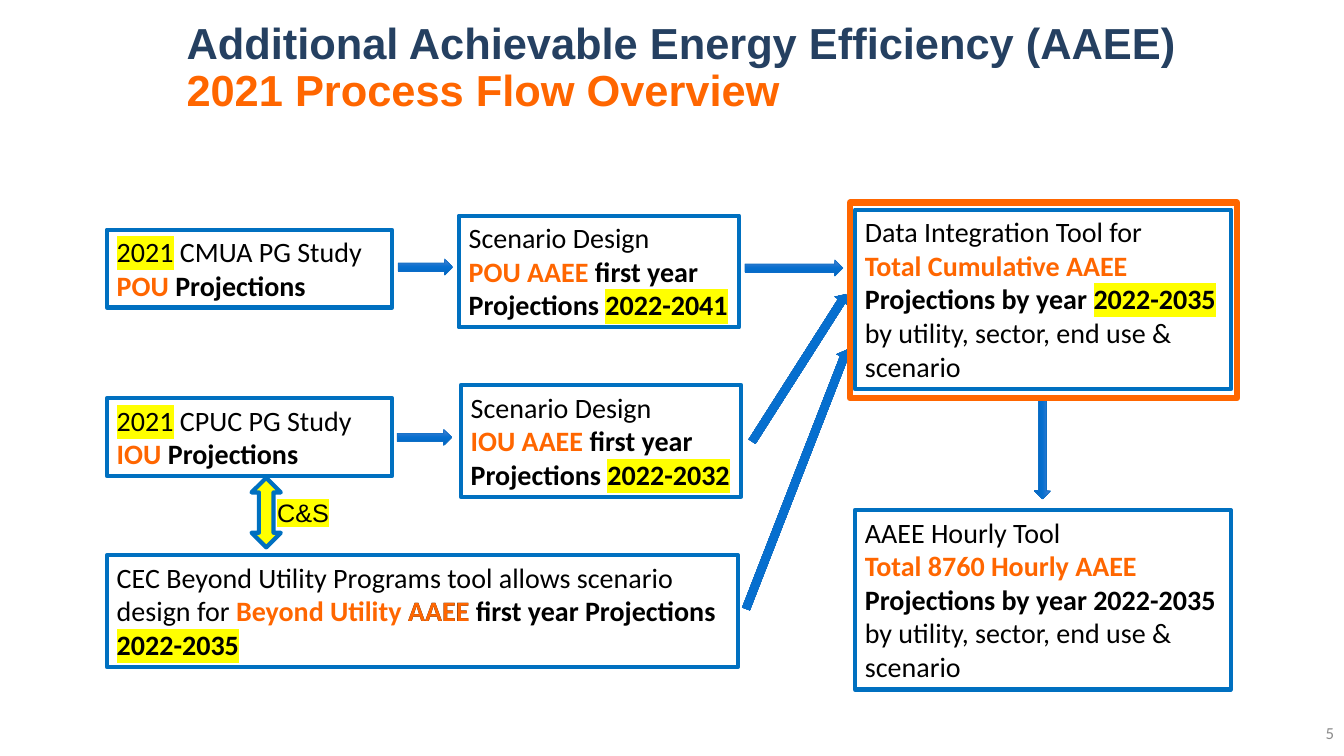
"""Build the AAEE 2021 process flow slide."""
import math

from lxml import etree
from pptx import Presentation
from pptx.dml.color import RGBColor
from pptx.enum.shapes import MSO_SHAPE
from pptx.enum.text import MSO_ANCHOR, MSO_AUTO_SIZE, PP_ALIGN
from pptx.oxml.ns import qn
from pptx.util import Inches, Pt

RECT, ARROW, BOTH = MSO_SHAPE.RECTANGLE, MSO_SHAPE.RIGHT_ARROW, MSO_SHAPE.LEFT_RIGHT_ARROW
TOP, MIDDLE = MSO_ANCHOR.TOP, MSO_ANCHOR.MIDDLE
GROW, FIXED = MSO_AUTO_SIZE.SHAPE_TO_FIT_TEXT, MSO_AUTO_SIZE.NONE
LEFT, RIGHT = PP_ALIGN.LEFT, PP_ALIGN.RIGHT

WIDE, HIGH = 13.33, 7.5
BLACK, ORANGE, YELLOW, BLUE, NAVY = "000000", "FF6600", "FFFF00", "0070C0", "254061"
EDGE, GRAY = "0F6FC6", "8C8C8C"
SHADES = [(0, "4C80D0"), (50, "066FCF"), (100, "0063BD")]
LINE, PAD = 0.336, 0.1

PLAIN, BOLD, HOT = {}, {"bold": True}, {"color": ORANGE, "bold": True}
MARK, KEY = {"mark": YELLOW}, {"mark": YELLOW, "bold": True}

TITLE = [[("Additional Achievable Energy Efficiency (AAEE) ", {"color": NAVY}),
          ("2021 Process Flow Overview", {"color": ORANGE})]]
END = [("by utility, sector, end use & scenario", PLAIN)]


def study(group, kind):
    """Return the text of a study box."""
    return [[("2021", MARK), (f" {group} PG Study", PLAIN)],
            [(kind, HOT), (" Projections", BOLD)]]


def design(kind, years):
    """Return the text of a scenario box."""
    return [[("Scenario Design", PLAIN)],
            [(f"{kind} AAEE ", HOT), ("first year", BOLD)],
            [("Projections ", BOLD), (years, KEY)]]


COLS = {"study": (1.06, 2.83), "pou": (4.55, 2.78), "iou": (4.57, 2.78),
        "tool": (8.48, 3.73), "span": (1.06, 6.26)}
BOXES = [
    ("study", 2.28, 2, study("CMUA", "POU")),
    ("study", 3.95, 2, study("CPUC", "IOU")),
    ("span", 5.51, 3, [[
        ("CEC Beyond Utility Programs tool allows scenario design for ", PLAIN),
        ("Beyond Utility ", HOT), ("AAEE first year Projections ", BOLD),
        ("2022-2035", KEY)]]),
    ("pou", 2.14, 3, design("POU", "2022-2041")),
    ("iou", 3.82, 3, design("IOU", "2022-2032")),
    ("tool", 2.08, 5, [
        [("Data Integration Tool for", PLAIN)],
        [("Total Cumulative AAEE ", HOT), ("Projections by year ", BOLD),
         ("2022-2035", KEY)], END]),
    ("tool", 5.06, 5, [
        [("AAEE Hourly Tool", PLAIN)],
        [("Total 8760 Hourly AAEE ", HOT), ("Projections by year 2022-2035", BOLD)],
        END]),
]
ARROWS = [
    ((7.39, 2.66), (8.36, 2.66)),
    ((3.95, 2.65), (4.49, 2.65)),
    ((3.94, 4.34), (4.48, 4.34)),
    ((7.46, 4.38), (8.39, 2.92)),
    ((7.40, 6.04), (8.40, 3.47)),
    ((10.34, 3.96), (10.34, 4.95)),
]


def rgb(code):
    """Turn a hex string into a colour."""
    return RGBColor.from_string(code)


def write(frame, paras, size=20, font="Calibri", anchor=TOP, fit=GROW,
          align=LEFT, space=None):
    """Fill a text frame with formatted runs."""
    frame.word_wrap, frame.auto_size, frame.vertical_anchor = True, fit, anchor
    for num, runs in enumerate(paras):
        para = frame.add_paragraph() if num else frame.paragraphs[0]
        para.alignment = align
        if space:
            para.line_spacing = space
        for text, look in runs:
            run = para.add_run()
            run.text = text
            face = run.font
            face.size, face.name = Pt(size), font
            face.bold = look.get("bold", False)
            face.color.rgb = rgb(look.get("color", BLACK))
            if "mark" in look:
                tint = etree.Element(qn("a:highlight"))
                etree.SubElement(tint, qn("a:srgbClr"), val=look["mark"])
                run._r.rPr.find(qn("a:solidFill")).addnext(tint)


def draw(slide, kind, at, color, width, fill=None):
    """Add an outlined shape."""
    shape = slide.shapes.add_shape(kind, *map(Inches, at))
    shape.shadow.inherit = False
    if fill:
        shape.fill.solid()
        shape.fill.fore_color.rgb = rgb(fill)
    else:
        shape.fill.background()
    shape.line.color.rgb, shape.line.width = rgb(color), Pt(width)
    return shape


def shade(shape):
    """Give a shape the blue three-stop gradient."""
    grad = etree.Element(qn("a:gradFill"), rotWithShape="1")
    stops = etree.SubElement(grad, qn("a:gsLst"))
    for share, code in SHADES:
        stop = etree.SubElement(stops, qn("a:gs"), pos=str(share * 1000))
        etree.SubElement(stop, qn("a:srgbClr"), val=code)
    etree.SubElement(grad, qn("a:lin"), ang="5400000", scaled="0")
    props = shape._element.spPr
    props.replace(props.find(qn("a:noFill")), grad)


def point(slide, kind, start, end, thick, *look):
    """Draw a block arrow between two points."""
    (left, top), (right, low) = start, end
    span = math.dist(start, end)
    at = ((left + right - span) / 2, (top + low - thick) / 2, span, thick)
    shape = draw(slide, kind, at, *look)
    shape.rotation = math.degrees(math.atan2(low - top, right - left)) % 360
    return shape


def label(slide, at, text, look, **form):
    """Add a text box holding one run."""
    box = slide.shapes.add_textbox(*map(Inches, at))
    write(box.text_frame, [[(text, look)]], **form)


def main():
    """Build and save the slide."""
    deck = Presentation()
    deck.slide_width, deck.slide_height = Inches(WIDE), Inches(HIGH)
    slide = deck.slides.add_slide(deck.slide_layouts[5])
    title = slide.shapes.title
    title.left, title.top, title.width, title.height = map(
        Inches, (1.75, 0.06, 10.14, 1.25))
    heads = [[(text, {**look, **BOLD}) for text, look in runs] for runs in TITLE]
    write(title.text_frame, heads, size=31, font="Arial", anchor=MIDDLE,
          fit=FIXED, space=0.9)

    for col, top, lines, paras in BOXES:
        left, width = COLS[col]
        box = draw(slide, RECT, (left, top, width, lines * LINE + PAD), BLUE, 3)
        write(box.text_frame, paras)

    for start, end in ARROWS:
        shade(point(slide, ARROW, start, end, 0.16, EDGE, 0.5))

    label(slide, (3.95, 5.84, 1.08, 0.44), "AAEE", HOT)
    draw(slide, RECT, (8.43, 2.01, 3.84, 1.94), ORANGE, 4.5)
    label(slide, (11.36, 7.07, 1.97, 0.4), "5", {"color": GRAY}, size=12,
          anchor=MIDDLE, fit=FIXED, align=RIGHT)
    point(slide, BOTH, (2.64, 4.74), (2.64, 5.43), 0.29, BLUE, 3, YELLOW)
    label(slide, (2.65, 4.88, 0.75, 0.4), "C&S", MARK, size=18, font="Arial")
    deck.save("out.pptx")


if __name__ == "__main__":
    main()
